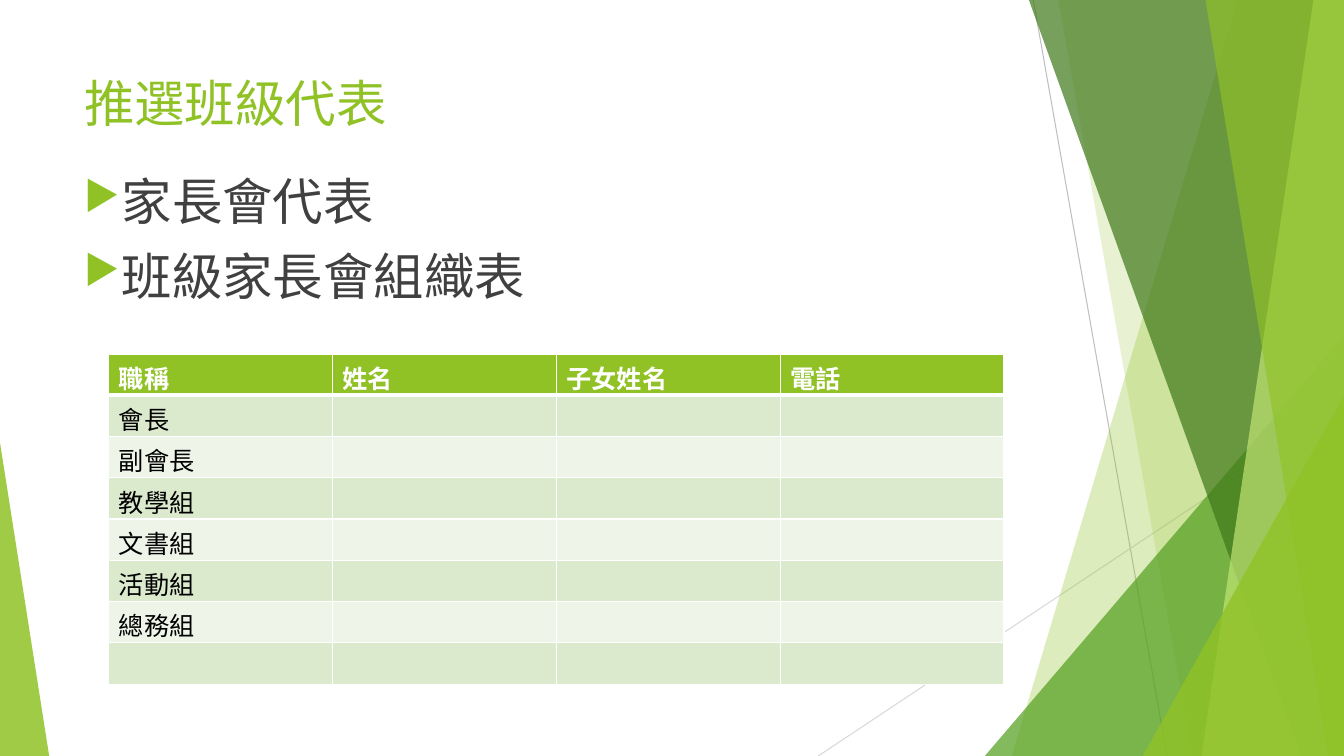
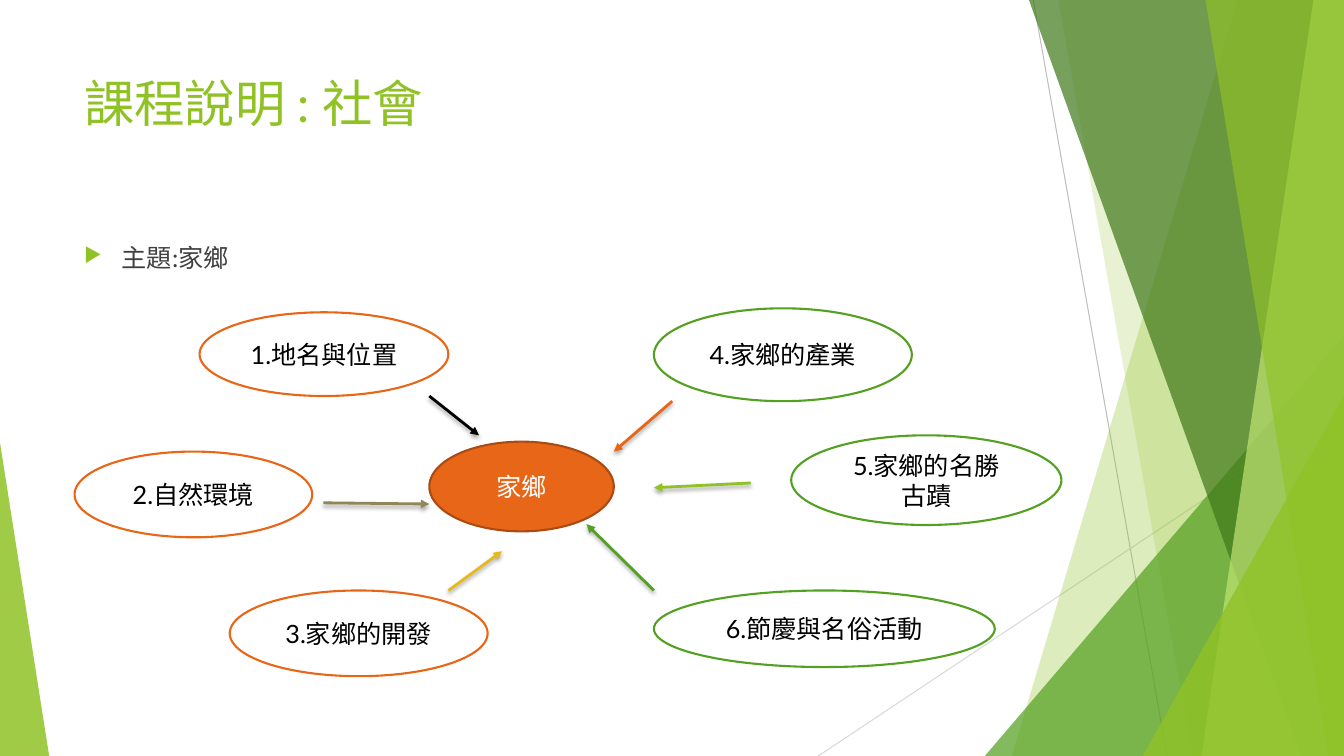
"""Build two class-meeting slides: a parent committee table and a topic map."""
from lxml import etree
from pptx import Presentation
from pptx.dml.color import RGBColor
from pptx.enum.shapes import MSO_CONNECTOR, MSO_SHAPE
from pptx.enum.text import MSO_ANCHOR, PP_ALIGN
from pptx.oxml.ns import qn
from pptx.util import Cm, Pt

LINE = MSO_CONNECTOR.STRAIGHT
OVAL = MSO_SHAPE.OVAL
TRIANGLE = MSO_SHAPE.ISOSCELES_TRIANGLE
MIDDLE = MSO_ANCHOR.MIDDLE
CENTER = PP_ALIGN.CENTER

FONT = "Lato"
LIME, GREEN, ORANGE = "90C226", "54A021", "E76618"
RUST, GRAY, BLACK, WHITE = "AB4B12", "404040", "000000", "FFFFFF"
WIDE, HIGH = 33.87, 19.05

RAYS = [
    ("BFBFBF", (26.04, 0), (29.41, HIGH)),
    ("D9D9D9", (WIDE, 10.24), (20.62, HIGH)),
]
# (colour, opacity, geometry): top and foot of a band, or left, top, width, lean
BANDS = [
    (LIME, 30, (31.19, 25.5)),
    (LIME, 20, (26.67, 30.05)),
    (GREEN, 72, (24.82, 8.46, 9.05, 1)),
    ("3F7819", 70, (25.93, 32.79)),
    ("C0E474", 70, (33.1, 30.28)),
    (LIME, 65, (30.38, 33.48)),
    (LIME, 80, (28.8, 9.98, 5.07, 1)),
    (LIME, 85, (0, 11.15, 1.24, 0)),
]

PAGES = [
    ("推選班級代表", ["家長會代表", "班級家長會組織表"], 36, 4.17),
    ("課程說明 : 社會", ["主題:家鄉"], 18, 5.99),
]

HEADS = ["職稱", "姓名", "子女姓名", "電話"]
ROLES = ["會長", "副會長", "教學組", "文書組", "活動組", "總務組", ""]
TABLE_AT, COL, ROW = (2.74, 8.92), 5.64, 1.04

TOPICS = [
    ("家鄉", (10.82, 11.13, 4.65, 2.26), ORANGE, RUST, WHITE),
    ("1.地名與位置", (5.03, 7.87, 6.27, 2.11), WHITE, ORANGE, BLACK),
    ("2.自然環境", (1.88, 11.38, 5.99, 2.16), WHITE, ORANGE, BLACK),
    ("3.家鄉的開發", (5.79, 14.88, 6.5, 2.16), WHITE, ORANGE, BLACK),
    ("4.家鄉的產業", (16.48, 7.77, 6.5, 2.34), WHITE, GREEN, BLACK),
    ("5.家鄉的名勝古蹟", (19.94, 10.97, 6.81, 2.26), WHITE, GREEN, BLACK),
    ("6.節慶與名俗活動", (16.48, 14.88, 8.59, 1.93), WHITE, GREEN, BLACK),
]
ARROWS = [
    (BLACK, (10.82, 9.98), (12.07, 10.97)),
    ("918655", (8.15, 12.67), (10.82, 12.7)),
    ("E6B91E", (11.3, 14.88), (12.65, 13.89)),
    (ORANGE, (16.94, 10.11), (15.47, 11.38)),
    (LIME, (18.92, 12.17), (16.48, 12.29)),
    (GREEN, (16.48, 14.88), (14.78, 13.21)),
]


def color(code):
    """Turn a hex string into a colour."""
    return RGBColor.from_string(code)


def node(parent, tag, **attrs):
    """Append an XML child and return it."""
    return etree.SubElement(parent, qn(tag), attrs)


def fill(item, code):
    """Give a shape or cell a solid fill."""
    item.fill.solid()
    item.fill.fore_color.rgb = color(code)


def style(para, size, code, bold=False):
    """Format the runs of a paragraph."""
    for run in para.runs:
        run.font.name, run.font.size, run.font.bold = FONT, Pt(size), bold
        run.font.color.rgb = color(code)


def link(slide, code, start, end, width):
    """Draw a straight line without a theme shadow."""
    line = slide.shapes.add_connector(LINE, *map(Cm, start + end))
    line.line.color.rgb = color(code)
    line.line.width = Pt(width)
    node(line._element.spPr, "a:effectLst")
    return line


def arrow(slide, code, start, end):
    """Draw an arrow with a soft shadow."""
    props = link(slide, code, start, end, 2)._element.spPr
    node(props.find(qn("a:ln")), "a:tailEnd", type="triangle")
    shade = node(props.find(qn("a:effectLst")), "a:outerShdw", blurRad=str(Pt(3)),
                 dist=str(Pt(2)), dir="5400000", rotWithShape="0")
    node(node(shade, "a:srgbClr", val=BLACK), "a:alpha", val="35000")


def band(slide, code, alpha, geom):
    """Draw one see-through band or corner triangle."""
    if len(geom) == 2:
        top, foot = map(Cm, geom)
        right, base = Cm(WIDE), Cm(HIGH)
        path = slide.shapes.build_freeform(top, 0)
        path.add_line_segments([(right, 0), (right, base), (foot, base)], close=True)
        shape = path.convert_to_shape()
    else:
        left, top, width, lean = geom
        shape = slide.shapes.add_shape(TRIANGLE, Cm(left), Cm(top), Cm(width), Cm(HIGH - top))
        shape.adjustments[0] = lean
    shape.shadow.inherit = False
    fill(shape, code)
    shape.line.fill.background()
    tint = shape._element.spPr.find(qn("a:solidFill"))[0]
    node(tint, "a:alpha", val=str(alpha * 1000))


def write(slide, lines, top, high, size, code):
    """Add a wrapped text box and return its paragraphs."""
    frame = slide.shapes.add_textbox(Cm(1.87), Cm(top), Cm(23.88), Cm(high)).text_frame
    frame.word_wrap = True
    frame.text = "\n".join(lines)
    for para in frame.paragraphs:
        style(para, size, code)
    return frame.paragraphs


def bullet(para):
    """Give a paragraph the green triangle bullet."""
    para.space_before = Pt(10)
    props = para._p.get_or_add_pPr()
    props.set("marL", str(Cm(0.95)))
    props.set("indent", str(-Cm(0.95)))
    node(node(props, "a:buClr"), "a:srgbClr", val=LIME)
    node(props, "a:buSzPct", val="80000")
    node(props, "a:buChar", char="▶")


def page(deck, title, points, size, top):
    """Add a slide with the shared backdrop, title and bullets."""
    slide = deck.slides.add_slide(deck.slide_layouts[6])
    for ray in RAYS:
        link(slide, *ray, 0.75)
    for part in BANDS:
        band(slide, *part)
    write(slide, [title], 1.7, 3.66, 36, LIME)
    for para in write(slide, points, top, 16.76 - top, size, GRAY):
        bullet(para)
    return slide


def border(cell, foot):
    """Draw white cell borders with the given bottom width."""
    props = cell._tc.get_or_add_tcPr()
    for spot, side in enumerate("LRTB"):
        edge = node(props, "a:ln" + side, w=str(Pt(foot if side == "B" else 1)))
        node(node(edge, "a:solidFill"), "a:srgbClr", val=WHITE)
        props.insert(spot, edge)


def roster(slide):
    """Add the committee table."""
    rows = [HEADS] + [[role] + [""] * (len(HEADS) - 1) for role in ROLES]
    size = COL * len(HEADS), ROW * len(rows)
    table = slide.shapes.add_table(len(rows), len(HEADS), *map(Cm, TABLE_AT + size)).table
    table.horz_banding = False
    for r, row in enumerate(rows):
        head = r == 0
        back = LIME if head else ("EEF4E8", "DBE9CD")[r % 2]
        for c, text in enumerate(row):
            cell = table.cell(r, c)
            cell.text_frame.text = text
            style(cell.text_frame.paragraphs[0], 18, WHITE if head else BLACK, head)
            fill(cell, back)
            border(cell, 3 if head else 1)


def topic(slide, text, box, back, edge, ink):
    """Add one labelled oval."""
    oval = slide.shapes.add_shape(OVAL, *map(Cm, box))
    oval.shadow.inherit = False
    fill(oval, back)
    oval.line.color.rgb = color(edge)
    oval.line.width = Pt(1.5)
    frame = oval.text_frame
    frame.text = text
    frame.vertical_anchor = MIDDLE
    frame.paragraphs[0].alignment = CENTER
    style(frame.paragraphs[0], 18, ink)


def main():
    """Build and save the deck."""
    deck = Presentation()
    deck.slide_width, deck.slide_height = Cm(WIDE), Cm(HIGH)
    first, second = [page(deck, *item) for item in PAGES]
    roster(first)
    for item in TOPICS:
        topic(second, *item)
    for item in ARROWS:
        arrow(second, *item)
    deck.save("out.pptx")


if __name__ == "__main__":
    main()
